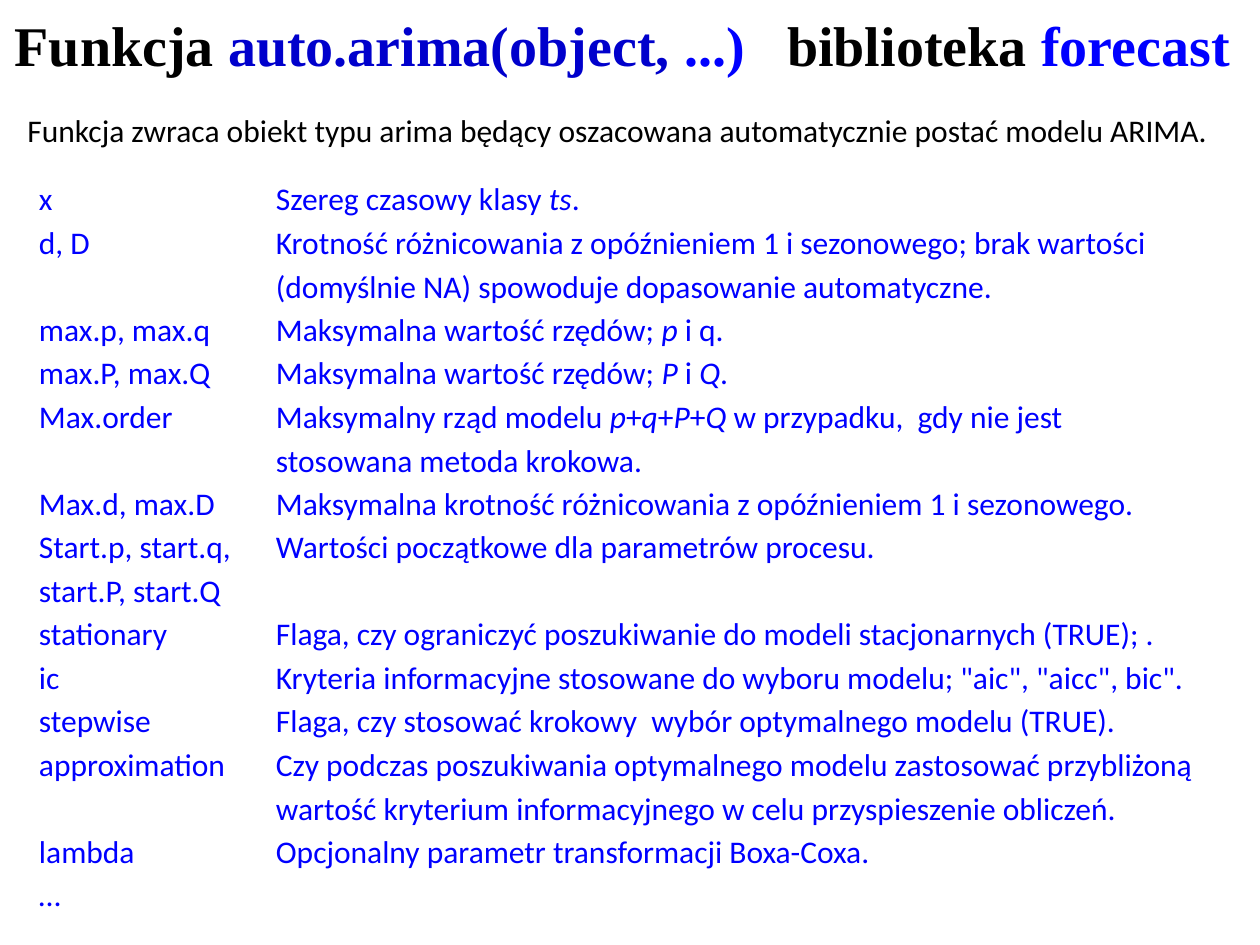
from pptx import Presentation
from pptx.dml.color import RGBColor
from pptx.enum.text import MSO_ANCHOR as Anchor, PP_ALIGN as Align
from pptx.util import Pt

COLORS = {"black": "000000", "navy": "0000CC", "blue": "0000FF"}
LINE_HEIGHT = 24.84

TITLE = [
    ("Funkcja ", "black"),
    ("auto.arima(object, ", "navy"),
    ("...)   ", "blue"),
    ("biblioteka ", "black"),
    ("forecast", "blue"),
]
INTRO = "Funkcja zwraca obiekt typu arima będący oszacowana automatycznie postać modelu ARIMA."

# Argument, description (*italic* between asterisks), number of lines
ARGUMENTS = [
    ("x", "Szereg czasowy klasy *ts*.", 1),
    ("d, D", "Krotność różnicowania z opóźnieniem 1 i sezonowego; brak wartości "
             "(domyślnie NA) spowoduje dopasowanie automatyczne.", 2),
    ("max.p, max.q", "Maksymalna wartość rzędów; *p* i q.", 1),
    ("max.P, max.Q", "Maksymalna wartość rzędów; *P* i *Q*.", 1),
    ("Max.order", "Maksymalny rząd modelu *p*+*q*+*P*+*Q* w przypadku,  gdy nie jest "
                  "stosowana metoda krokowa.", 2),
    ("Max.d, max.D", "Maksymalna krotność różnicowania z opóźnieniem 1 i sezonowego.", 1),
    ("Start.p, start.q, start.P, start.Q", "Wartości początkowe dla parametrów procesu.", 2),
    ("stationary", "Flaga, czy ograniczyć poszukiwanie do modeli stacjonarnych (TRUE); .", 1),
    ("ic", 'Kryteria informacyjne stosowane do wyboru modelu; "aic", "aicc", bic".', 1),
    ("stepwise", "Flaga, czy stosować krokowy  wybór optymalnego modelu (TRUE).", 1),
    ("approximation", "Czy podczas poszukiwania optymalnego modelu zastosować przybliżoną "
                      "wartość kryterium informacyjnego w celu przyspieszenie obliczeń.", 2),
    ("lambda", "Opcjonalny parametr transformacji Boxa-Coxa.", 1),
    ("…", "", 1),
]


def add_run(paragraph, text, color, font="Calibri", size=18, bold=False, italic=False):
    run = paragraph.add_run()
    run.text = text
    run.font.name = font
    run.font.size = Pt(size)
    run.font.bold = bold
    run.font.italic = italic
    run.font.color.rgb = RGBColor.from_string(COLORS[color])


def add_text_line(left, top, width, height):
    """Add a wrapping, vertically centred text box and return its paragraph."""
    frame = slide.shapes.add_textbox(Pt(left), Pt(top), Pt(width), Pt(height)).text_frame
    frame.word_wrap = True
    frame.vertical_anchor = Anchor.MIDDLE
    return frame.paragraphs[0]


prs = Presentation()
prs.slide_width, prs.slide_height = Pt(720), Pt(540)
slide = prs.slides.add_slide(prs.slide_layouts[6])

heading = add_text_line(-11.5, 3.6, 734.4, 43.2)
heading.alignment = Align.CENTER
for text, color in TITLE:
    add_run(heading, text, color, "Times New Roman", 32, bold=True)

intro = add_text_line(8.6, 59.8, 705.6, 28.8)
add_run(intro, INTRO, "black")

line_count = sum(lines for _, _, lines in ARGUMENTS)
arguments = slide.shapes.add_table(
    len(ARGUMENTS), 2, Pt(17.3), Pt(100), Pt(671.8), Pt(line_count * LINE_HEIGHT)
).table
arguments.first_row = False
arguments.horz_banding = False
arguments.columns[0].width = Pt(135.4)
arguments.columns[1].width = Pt(536.4)

for row, (argument, description, lines) in enumerate(ARGUMENTS):
    arguments.rows[row].height = Pt(lines * LINE_HEIGHT)
    for column, text in enumerate((argument, description)):
        cell = arguments.cell(row, column)
        cell.fill.background()
        cell.margin_left = cell.margin_right = Pt(5)
        cell.margin_top = cell.margin_bottom = 0
        paragraph = cell.text_frame.paragraphs[0]
        paragraph.line_spacing = 1.15
        for index, part in enumerate(text.split("*")):
            if part:
                add_run(paragraph, part, "blue", italic=index % 2 == 1)

prs.save("out.pptx")
